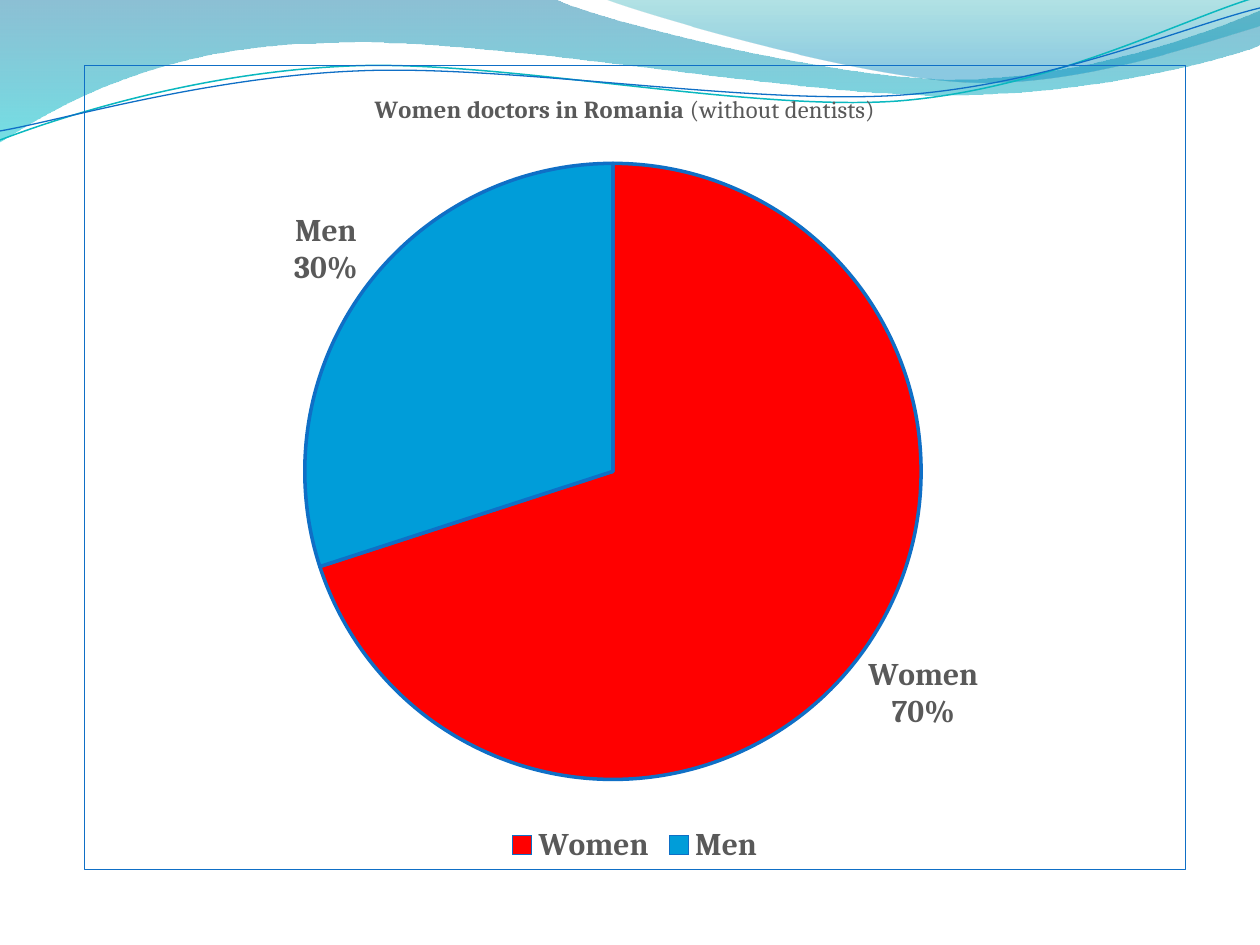
from lxml.etree import SubElement
from pptx import Presentation
from pptx.chart.data import CategoryChartData
from pptx.dml.color import RGBColor
from pptx.enum.chart import XL_CHART_TYPE, XL_LABEL_POSITION, XL_LEGEND_POSITION
from pptx.oxml import parse_xml
from pptx.oxml.ns import nsdecls, qn
from pptx.util import Pt

PX = 914400 / 126
FONT = "Cambria"
RED = RGBColor(0xFF, 0x00, 0x00)
SKY = RGBColor(0x00, 0x9D, 0xD9)
BLUE = RGBColor(0x0F, 0x6F, 0xC6)
TEAL = RGBColor(0x0A, 0xB8, 0xBF)
GREY = RGBColor(0x59, 0x59, 0x59)
DEEP_BLUE = RGBColor(0x00, 0x74, 0xA1)
AQUA = RGBColor(0x00, 0xC6, 0xCF)
DEEP_TEAL = RGBColor(0x00, 0xA1, 0xA9)
OCEAN = RGBColor(0x00, 0x8B, 0xBF)


def add_span(para, text, size=14, bold=False, color=GREY):
    span = para.add_run()
    span.text = text
    span.font.name, span.font.size, span.font.bold = FONT, Pt(size), bold
    span.font.color.rgb = color


def add_wave(page, start, steps, closed):
    """Draw px steps: one point is a straight line, three are a Bezier curve."""
    points = [start] + [point for step in steps for point in step]
    emu_points = [(round(x * PX), round(y * PX)) for x, y in points]
    builder = page.shapes.build_freeform(*emu_points[0], scale=1.0)
    builder.add_line_segments(emu_points[1:], close=closed)
    wave = builder.convert_to_shape()
    wave.shadow.inherit = False
    # Join each run of three line points into one cubic curve
    lines = iter(list(wave.element.iter(qn("a:lnTo"))))
    for step in steps:
        segment = [next(lines) for _ in step]
        if len(segment) == 3:
            curve = parse_xml(f'<a:cubicBezTo {nsdecls("a")}/>')
            segment[0].addprevious(curve)
            for line in segment:
                curve.append(line[0])
                line.getparent().remove(line)
    return wave


deck = Presentation()
deck.slide_width, deck.slide_height = round(1260 * PX), round(945 * PX)
page = deck.slides.add_slide(deck.slide_layouts[6])

# Translucent waves: start, steps, gradient stops (position, colour, opacity %)
bands = [
    ((0, 0),
     [[(554, -1)],
      [(600, 21), (837, 79), (955, 79)],
      [(1081, 79), (1207, 33), (1260, 11)],
      [(1261, 45)],
      [(1239, 55), (1096, 96), (940, 95)],
      [(784, 95), (481, 35), (324, 43)],
      [(163, 45), (58, 105), (-1, 142)]],
     [(0, DEEP_BLUE, 45), (1, AQUA, 55)]),
    ((604, -1),
     [[(641, 14), (859, 78), (969, 82)],
      [(1079, 87), (1211, 40), (1260, 26)],
      [(1260, 0)]],
     [(0, DEEP_TEAL, 30), (0.8, OCEAN, 45)]),
]
for start, steps, stops in bands:
    band = add_wave(page, start, steps, True)
    band.line.fill.background()
    band.fill.gradient()
    band.fill.gradient_angle = 270
    for stop, (position, color, _) in zip(band.fill.gradient_stops, stops):
        stop.position = position
        stop.color.rgb = color
    for tag, (_, _, opacity) in zip(band.element.iter(qn("a:srgbClr")), stops):
        SubElement(tag, qn("a:alpha"), val=str(opacity * 1000))

# Thin wave lines
strands = [
    ((0, 140),
     [[(60, 117), (199, 72), (349, 66)],
      [(498, 59), (747, 112), (898, 101)],
      [(1050, 89), (1182, 19), (1257, -3)]], TEAL, 0.85),
    ((0, 131),
     [[(59, 121), (207, 77), (357, 71)],
      [(508, 64), (752, 106), (903, 95)],
      [(1053, 84), (1186, 26), (1260, 8)]], BLUE, 0.75),
]
for start, steps, color, width in strands:
    strand = add_wave(page, start, steps, False)
    strand.fill.background()
    strand.line.color.rgb = color
    strand.line.width = Pt(width)

# Pie chart; a new pie takes one series, so replace_data brings in the second
data = CategoryChartData()
data.categories = ["Women", "Men"]
for name in ("Series 1", "Series 2"):
    data.add_series(name, (70, 30))
frame = [round(value * PX) for value in (84, 65, 1102, 805)]
chart = page.shapes.add_chart(XL_CHART_TYPE.PIE, *frame, data).chart
chart.replace_data(data)
chart.font.name, chart.font.size = FONT, Pt(10)
plot = chart.plots[0]
plot.vary_by_categories = True
for series, colors in zip(plot.series, ((RED, SKY), (BLUE, SKY))):
    for index, color in enumerate(colors):
        slice_format = series.points[index].format
        slice_format.fill.solid()
        slice_format.fill.fore_color.rgb = color
        slice_format.line.color.rgb = BLUE
        slice_format.line.width = Pt(2)

# Chart title
chart.has_title = True
title_para = chart.chart_title.text_frame.paragraphs[0]
add_span(title_para, "Women doctors in Romania", bold=True)
add_span(title_para, " (without dentists)")

# Labels and legend
labels = plot.series[0].data_labels
labels.show_category_name = labels.show_percentage = True
labels.show_value = False
labels.number_format, labels.number_format_is_linked = "0%", False
labels.position = XL_LABEL_POSITION.OUTSIDE_END
chart.has_legend = True
chart.legend.position = XL_LEGEND_POSITION.BOTTOM
chart.legend.include_in_layout = False
for font in (labels.font, chart.legend.font):
    font.name, font.size, font.bold = FONT, Pt(18), True
    font.color.rgb = GREY
separator = parse_xml(f'<c:separator {nsdecls("c")}>\n</c:separator>')
series_labels = chart.element.xpath(".//c:ser/c:dLbls")[0]
series_labels.find(qn("c:showBubbleSize")).addnext(separator)

# Title and plot places, as shares of the chart frame
title = chart.chart_title.element
plot_area = chart.element.xpath(".//c:plotArea")[0]
places = [(title, 1, {"x": 0.26, "y": 0.03}),
          (plot_area, 0, {"x": 0.2, "y": 0.12, "w": 0.56, "h": 0.77})]
for owner, slot, place in places:
    for old in owner.findall(qn("c:layout")):
        owner.remove(old)
    target = '<c:layoutTarget val="inner"/>' if owner is plot_area else ""
    modes = "".join(f'<c:{key}Mode val="edge"/>' for key in "xy")
    sizes = "".join(f'<c:{key} val="{value}"/>' for key, value in place.items())
    owner.insert(slot, parse_xml(
        f'<c:layout {nsdecls("c")}><c:manualLayout>{target}{modes}{sizes}'
        '</c:manualLayout></c:layout>'))

# Chart border
chart.element.find(qn("c:txPr")).addprevious(parse_xml(
    f'<c:spPr {nsdecls("c", "a")}><a:noFill/><a:ln w="{Pt(0.75)}"><a:solidFill>'
    f'<a:srgbClr val="{BLUE}"/></a:solidFill></a:ln></c:spPr>'))

deck.save("out.pptx")
